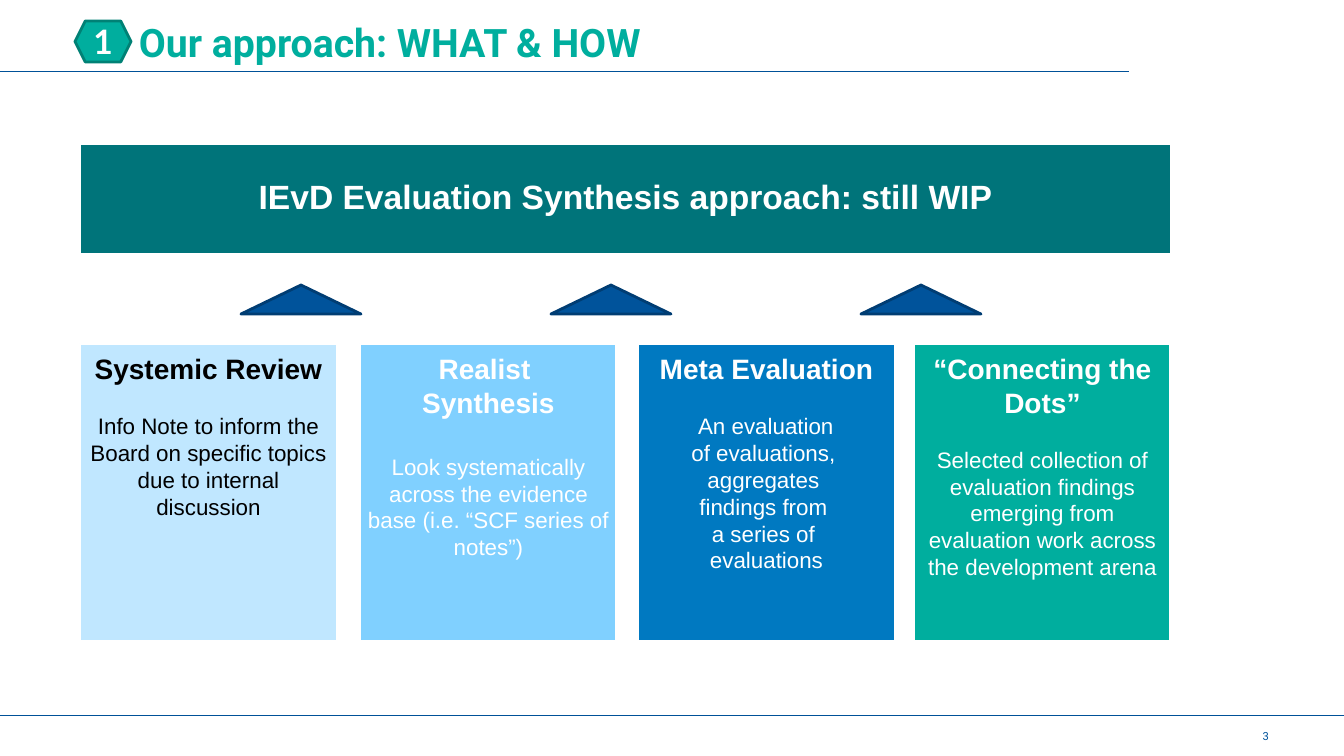
import pptx
import pptx.util
import pptx.dml.color
import pptx.enum.shapes
import pptx.enum.text
import lxml.etree

RGBColor = pptx.dml.color.RGBColor
SHAPE = pptx.enum.shapes.MSO_SHAPE
ANCHOR = pptx.enum.text.MSO_ANCHOR
ALIGN = pptx.enum.text.PP_ALIGN
Pt = pptx.util.Pt

WHITE = RGBColor(0xFF, 0xFF, 0xFF)
BLACK = RGBColor(0, 0, 0)
GREEN = RGBColor(0x00, 0xAE, 0x9E)
DARK_GREEN = RGBColor(0x00, 0x81, 0x75)
TEAL = RGBColor(0x00, 0x74, 0x7A)
NAVY = RGBColor(0x00, 0x53, 0x9B)
DARK_NAVY = RGBColor(0x00, 0x3D, 0x73)
RULE_BLUE = RGBColor(0x00, 0x51, 0x98)
PALE_BLUE = RGBColor(0xC0, 0xE7, 0xFF)
SKY_BLUE = RGBColor(0x80, 0xD0, 0xFF)
BLUE = RGBColor(0x00, 0x79, 0xC1)
PX = 914400 / 100.8


def px(*values):
    return [round(v * PX) for v in values]


def add_block(kind, box, fill, line, inset, anchor, lines):
    if kind is None:
        sp = s.shapes.add_textbox(*px(*box))
    else:
        sp = s.shapes.add_shape(kind, *px(*box))
        sp.shadow.inherit = False
        sp.fill.solid()
        sp.fill.fore_color.rgb = fill
        sp.line.color.rgb = line
        sp.line.width = Pt(2)
    tf = sp.text_frame
    tf.word_wrap = True
    tf.vertical_anchor = anchor
    tf.margin_left = tf.margin_right = tf.margin_top = tf.margin_bottom = px(inset)[0]
    for i, (text, size, font, color, bold, align, before) in enumerate(lines):
        p = tf.add_paragraph() if i else tf.paragraphs[0]
        p.alignment = align
        if before:
            p.space_before = Pt(before)
        r = p.add_run()
        r.text = text
        r.font.size = Pt(size)
        r.font.name = font
        r.font.bold = bold
        r.font.color.rgb = color
    return tf


prs = pptx.Presentation()
prs.slide_width, prs.slide_height = px(1344, 756)
s = prs.slides.add_slide(prs.slide_layouts[6])

for y, right in [(715, 1344), (71, 1129)]:
    rule = s.shapes.add_connector(pptx.enum.shapes.MSO_CONNECTOR.STRAIGHT, *px(0, y, right, y))
    rule.line.color.rgb = RULE_BLUE
    rule.line.width = Pt(0.25)
    lxml.etree.SubElement(rule._element.spPr, pptx.oxml.ns.qn("a:effectLst"))

add_block(None, (1217, 715, 52, 41), None, None, 0, ANCHOR.MIDDLE,
          [("3", 8, "Roboto", NAVY, False, ALIGN.RIGHT, 0)])
tf = add_block(None, (129, 13, 950, 57), None, None, 5, ANCHOR.TOP,
               [("Our approach: WHAT & HOW", 28, "Roboto", GREEN, True, ALIGN.LEFT, 0)])
tf.margin_left = px(10)[0]
add_block(SHAPE.HEXAGON, (75, 21, 56, 41), GREEN, DARK_GREEN, 0, ANCHOR.MIDDLE,
          [("1", 24, "Lato", WHITE, True, ALIGN.CENTER, 0)])
tf = add_block(SHAPE.RECTANGLE, (80, 144, 1091, 110), TEAL, WHITE, 8, ANCHOR.MIDDLE,
               [("IEvD Evaluation Synthesis approach: still WIP", 24, "Arial", WHITE, True, ALIGN.CENTER, 0)])
tf.paragraphs[0].line_spacing = 0.9

for i in range(3):
    add_block(SHAPE.ISOSCELES_TRIANGLE, (241 + 310 * i, 285, 120, 29), NAVY, DARK_NAVY, 0, ANCHOR.MIDDLE, [])

cards = [
    (80, PALE_BLUE, BLACK, 19, ["Systemic Review"],
     ["Info Note to inform the Board on specific topics due to internal discussion"]),
    (360, SKY_BLUE, WHITE, 24, ["Realist ", "Synthesis"],
     ["Look systematically across the evidence base (i.e. “SCF series of notes”)"]),
    (638, BLUE, WHITE, 19, ["Meta Evaluation"],
     [" An evaluation ", "of evaluations, ", "aggregates ", "findings from ", "a series of ", "evaluations"]),
    (914, GREEN, WHITE, 19, ["“Connecting the Dots”"],
     ["Selected collection of evaluation findings emerging from evaluation work across the development arena"]),
]
for left, fill, color, gap, heading, body in cards:
    lines = [(text, 20, "Arial", color, True, ALIGN.CENTER, 0) for text in heading]
    lines += [(text, 16, "Arial", color, False, ALIGN.CENTER, 0 if i else gap) for i, text in enumerate(body)]
    add_block(SHAPE.RECTANGLE, (left, 344, 257, 297), fill, WHITE, 8, ANCHOR.TOP, lines)

prs.save("out.pptx")
